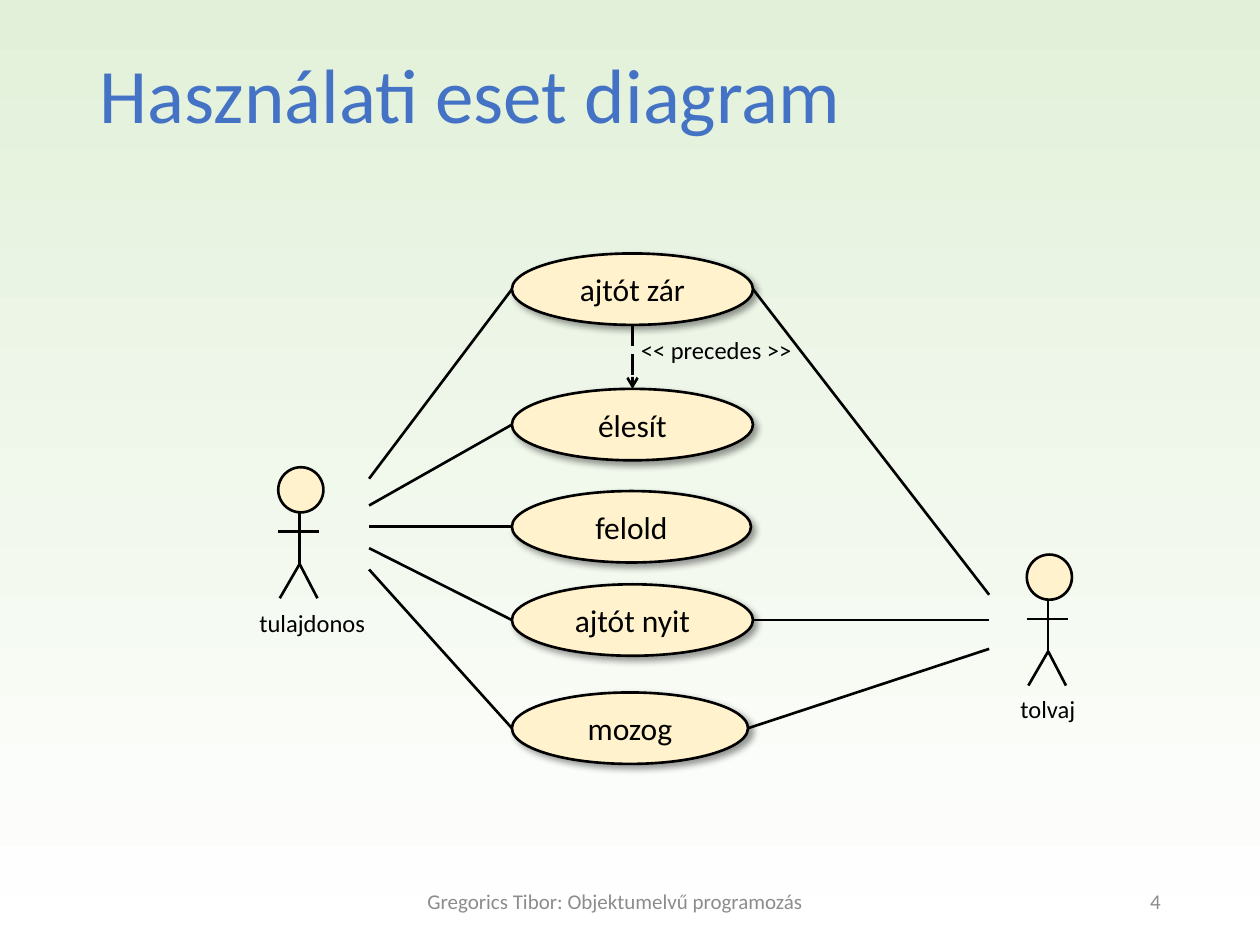
from lxml import etree
from pptx import Presentation
from pptx.dml.color import RGBColor
from pptx.enum.dml import MSO_LINE
from pptx.enum.shapes import MSO_CONNECTOR, MSO_SHAPE
from pptx.enum.text import MSO_ANCHOR, PP_ALIGN
from pptx.oxml.ns import qn
from pptx.util import Cm, Pt

LONG_DASH = MSO_LINE.LONG_DASH
STRAIGHT = MSO_CONNECTOR.STRAIGHT
OVAL = MSO_SHAPE.OVAL
TOP, MIDDLE = MSO_ANCHOR.TOP, MSO_ANCHOR.MIDDLE
LEFT, CENTER, RIGHT = PP_ALIGN.LEFT, PP_ALIGN.CENTER, PP_ALIGN.RIGHT

FONT = "Calibri"
COLORS = {
    "title": "4472C4",
    "ink": "000000",
    "node": "FFF2CC",
    "footer": "8C8C8C",
    "sky_bottom": "FFFFFF",
    "sky_top": "E2F0D9",
}
LINE_WIDTH = Pt(1.5)

# All lengths below are centimetres.
CASE_LEFT, CASE_HEIGHT = 10.32, 1.44
HEAD = 0.91
OWNER_SIDE, THIEF_SIDE = 7.44, 19.94

# name, centre height, width, owner's line end, thief's line end
USE_CASES = [
    ("ajtót zár", 5.83, 4.86, 9.65, 11.99),
    ("élesít", 8.56, 4.86, 10.19, None),
    ("felold", 10.62, 4.82, 10.62, None),
    ("ajtót nyit", 12.5, 4.86, 11.05, 12.5),
    ("mozog", 14.68, 4.76, 11.48, 13.08),
]

# name, head's left and top, caption's left, top and width
ACTORS = [
    ("tulajdonos", (5.61, 9.42), (4.98, 12.14, 2.67)),
    ("tolvaj", (20.7, 11.18), (20.32, 13.87, 1.63)),
]

# Body, legs and arms, measured from the head's top left corner
LIMBS = [
    ((0.43, HEAD), (0.43, 1.95)),
    ((0.43, 1.95), (0.79, 2.64)),
    ((0.43, 1.95), (0.03, 2.64)),
    ((0, 1.3), (0.83, 1.3)),
]


def rgb(name):
    return RGBColor.from_string(COLORS[name])


def write(frame, text, size, color="ink", align=LEFT, anchor=TOP):
    frame.vertical_anchor = anchor
    paragraph = frame.paragraphs[0]
    paragraph.alignment = align
    run = paragraph.add_run()
    run.text = text
    run.font.name = FONT
    run.font.size = Pt(size)
    run.font.color.rgb = rgb(color)
    return paragraph


def add_label(slide, box, text, size, wrap=False, **style):
    label = slide.shapes.add_textbox(*map(Cm, box))
    label.text_frame.word_wrap = wrap
    write(label.text_frame, text, size, **style)


def add_line(slide, start, end):
    line = slide.shapes.add_connector(STRAIGHT, *map(Cm, (*start, *end)))
    line.line.color.rgb = rgb("ink")
    line.line.width = LINE_WIDTH
    properties = line._element.spPr
    etree.SubElement(properties, qn("a:effectLst"))
    return line


def add_oval(slide, box):
    oval = slide.shapes.add_shape(OVAL, *map(Cm, box))
    oval.shadow.inherit = False
    oval.fill.solid()
    oval.fill.fore_color.rgb = rgb("node")
    oval.line.color.rgb = rgb("ink")
    oval.line.width = LINE_WIDTH
    return oval


def cast_shadow(shape):
    effects = shape._element.spPr.find(qn("a:effectLst"))
    shadow = etree.SubElement(
        effects, qn("a:outerShdw"), blurRad=str(Pt(4)), dist=str(Pt(3)),
        dir="2700000", algn="tl", rotWithShape="0")
    color = etree.SubElement(shadow, qn("a:srgbClr"), val=COLORS["ink"])
    etree.SubElement(color, qn("a:alpha"), val="40000")


def add_use_case(slide, name, middle, width, owner_end, thief_end):
    """Draw one use case and its lines to the actors who take part in it."""
    add_line(slide, (CASE_LEFT, middle), (OWNER_SIDE, owner_end))
    if thief_end is not None:
        add_line(slide, (CASE_LEFT + width, middle), (THIEF_SIDE, thief_end))
    top = middle - CASE_HEIGHT / 2
    case = add_oval(slide, (CASE_LEFT, top, width, CASE_HEIGHT))
    cast_shadow(case)
    write(case.text_frame, name, 18, align=CENTER, anchor=MIDDLE)


def add_actor(slide, name, head, caption):
    left, top = head
    for (x1, y1), (x2, y2) in LIMBS:
        add_line(slide, (left + x1, top + y1), (left + x2, top + y2))
    add_oval(slide, (left, top, HEAD, HEAD))
    add_label(slide, (*caption, 0.86), name, 14)


def add_precedence(slide, upper, lower):
    """Draw the dashed arrow from one use case down to the next."""
    _, upper_middle, width, *_ = upper
    _, lower_middle, *_ = lower
    x = CASE_LEFT + width / 2
    arrow = add_line(slide, (x, upper_middle + CASE_HEIGHT / 2),
                     (x, lower_middle - CASE_HEIGHT / 2))
    arrow.line.dash_style = LONG_DASH
    outline = arrow._element.spPr.find(qn("a:ln"))
    etree.SubElement(outline, qn("a:tailEnd"), type="arrow")
    add_label(slide, (12.67, 6.63, 3.58, 0.86), "<< precedes >>", 14)


def set_background(slide):
    fill = slide.background.fill
    fill.gradient()
    fill.gradient_angle = 90
    for stop, name in zip(fill.gradient_stops, ("sky_bottom", "sky_top")):
        stop.color.rgb = rgb(name)


def set_title(slide, text):
    title = slide.shapes.title
    title.left, title.top, title.width, title.height = map(
        Cm, (1.75, 1.02, 21.9, 3.68))
    write(title.text_frame, text, 44, color="title").line_spacing = 0.9


def main():
    presentation = Presentation()
    presentation.slide_width, presentation.slide_height = Cm(25.4), Cm(19.05)
    slide = presentation.slides.add_slide(presentation.slide_layouts[5])
    set_background(slide)
    set_title(slide, "Használati eset diagram")
    for use_case in USE_CASES:
        add_use_case(slide, *use_case)
    add_precedence(slide, *USE_CASES[:2])
    for actor in ACTORS:
        add_actor(slide, *actor)
    footer_style = {"wrap": True, "color": "footer", "anchor": MIDDLE}
    add_label(slide, (6.76, 17.65, 11.28, 1.02),
              "Gregorics Tibor: Objektumelvű programozás", 12,
              align=CENTER, **footer_style)
    add_label(slide, (17.93, 17.65, 5.72, 1.02), "4", 12,
              align=RIGHT, **footer_style)
    presentation.save("out.pptx")


if __name__ == "__main__":
    main()
